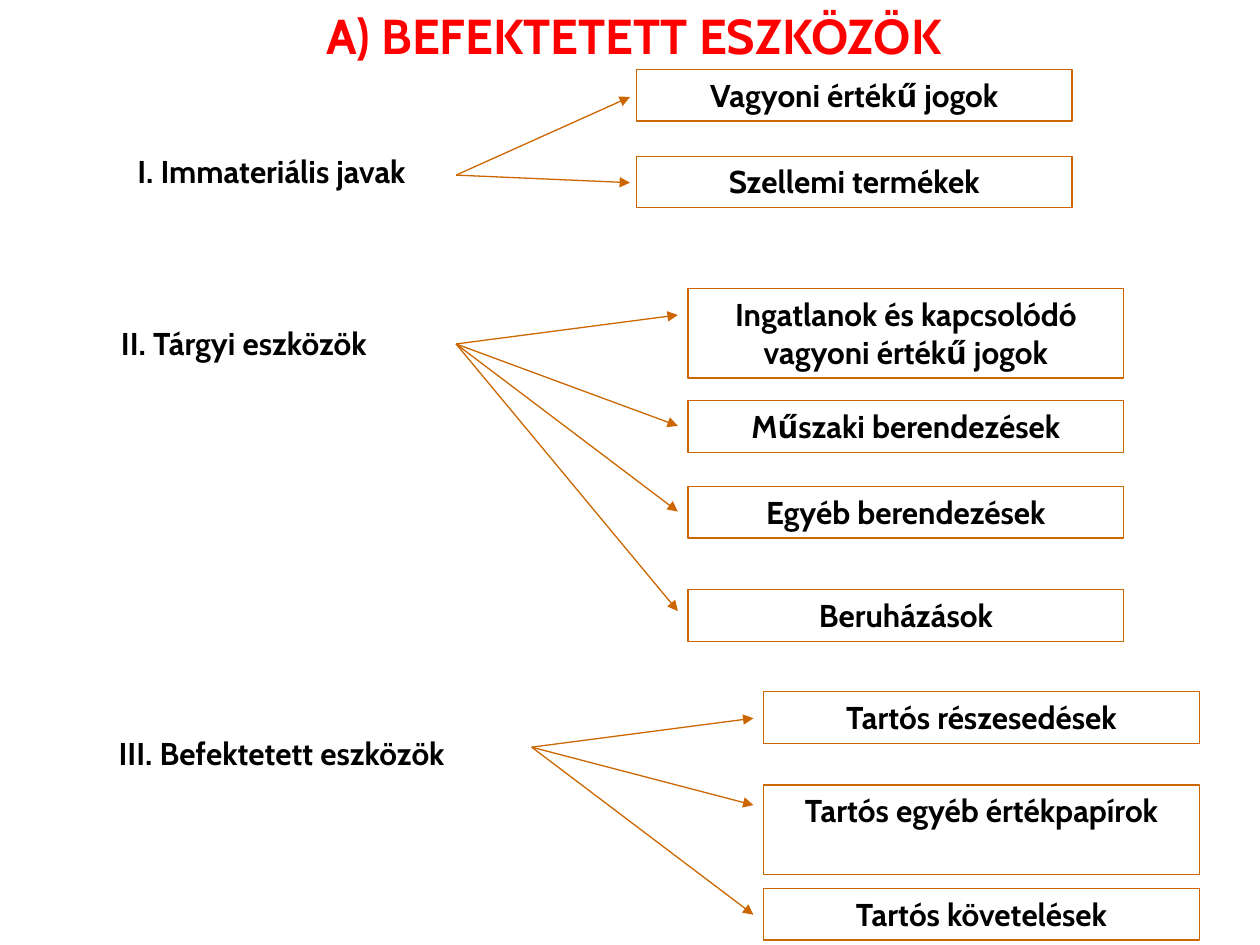
from dataclasses import dataclass

from pptx import Presentation
from pptx.dml.color import RGBColor
from pptx.enum.shapes import MSO_CONNECTOR, MSO_SHAPE
from pptx.enum.text import MSO_ANCHOR, PP_ALIGN
from pptx.oxml.ns import qn
from pptx.slide import Slide
from pptx.text.text import TextFrame
from pptx.util import Inches, Pt
from lxml.etree import SubElement

COLORS = {"title": "FF0000", "text": "000000", "line": "CC6600"}
FONT = "Cabin"
BOX_WIDTH = 3.46
ROW_HEIGHT = 0.41
TALL_HEIGHT = 0.71
LABEL_WIDTH, LABEL_HEIGHT = 4.25, 0.4


@dataclass
class Item:
    text: str
    top: float
    arrow_y: float
    height: float = ROW_HEIGHT


@dataclass
class AssetGroup:
    label: str
    label_left: float
    label_top: float
    arrow_start: tuple[float, float]
    arrow_end_x: float
    box_left: float
    items: list[Item]


GROUPS = [
    AssetGroup("I. Immateriális javak", 0.03, 1.16, (3.62, 1.39), 5, 5.05, [
        Item("Vagyoni értékű jogok", 0.55, 0.77),
        Item("Szellemi termékek", 1.24, 1.45),
    ]),
    AssetGroup("II. Tárgyi eszközök", -0.19, 2.52, (3.62, 2.73), 5.38, 5.46, [
        Item("Ingatlanok és kapcsolódó vagyoni értékű jogok", 2.29, 2.5, TALL_HEIGHT),
        Item("Műszaki berendezések", 3.18, 3.38),
        Item("Egyéb berendezések", 3.86, 4.06),
        Item("Beruházások", 4.68, 4.85),
    ]),
    AssetGroup("III. Befektetett eszközök", 0.11, 5.78, (4.22, 5.93), 5.98, 6.06, [
        Item("Tartós részesedések", 5.49, 5.7),
        Item("Tartós egyéb értékpapírok", 6.23, 6.39, TALL_HEIGHT),
        Item("Tartós követelések", 7.05, 7.26),
    ]),
]


def write_text(frame: TextFrame, text: str, size: int = 18, color: str = "text",
               anchor: MSO_ANCHOR = MSO_ANCHOR.TOP) -> None:
    frame.word_wrap = True
    frame.vertical_anchor = anchor
    paragraph = frame.paragraphs[0]
    paragraph.alignment = PP_ALIGN.CENTER
    run = paragraph.add_run()
    run.text = text
    run.font.name = FONT
    run.font.size = Pt(size)
    run.font.bold = True
    run.font.color.rgb = RGBColor.from_string(COLORS[color])


def add_title(slide: Slide, text: str) -> None:
    title = slide.shapes.title
    title.left, title.top = Inches(0.78), Inches(-0.35)
    title.width, title.height = Inches(8.5), Inches(1.25)
    write_text(title.text_frame, text, 28, "title", MSO_ANCHOR.MIDDLE)


def add_label(slide: Slide, group: AssetGroup) -> None:
    label = slide.shapes.add_textbox(Inches(group.label_left), Inches(group.label_top),
                                     Inches(LABEL_WIDTH), Inches(LABEL_HEIGHT))
    write_text(label.text_frame, group.label)


def add_box(slide: Slide, left: float, item: Item) -> None:
    box = slide.shapes.add_shape(MSO_SHAPE.RECTANGLE, Inches(left), Inches(item.top),
                                 Inches(BOX_WIDTH), Inches(item.height))
    box.shadow.inherit = False
    box.fill.background()
    box.line.color.rgb = RGBColor.from_string(COLORS["line"])
    box.line.width = Pt(0.75)
    write_text(box.text_frame, item.text)


def add_arrow(slide: Slide, start: tuple[float, float], end: tuple[float, float]) -> None:
    arrow = slide.shapes.add_connector(MSO_CONNECTOR.STRAIGHT,
                                       *map(Inches, start), *map(Inches, end))
    arrow.line.color.rgb = RGBColor.from_string(COLORS["line"])
    arrow.line.width = Pt(0.75)
    properties = arrow.element.spPr
    SubElement(properties.find(qn("a:ln")), qn("a:tailEnd"), type="triangle")
    SubElement(properties, qn("a:effectLst"))


def main() -> None:
    presentation = Presentation()
    presentation.slide_width, presentation.slide_height = Inches(10), Inches(7.5)
    slide = presentation.slides.add_slide(presentation.slide_layouts[5])
    add_title(slide, "A) BEFEKTETETT ESZKÖZÖK")
    for group in GROUPS:
        add_label(slide, group)
        for item in group.items:
            add_box(slide, group.box_left, item)
            add_arrow(slide, group.arrow_start, (group.arrow_end_x, item.arrow_y))
    presentation.save("out.pptx")


if __name__ == "__main__":
    main()
